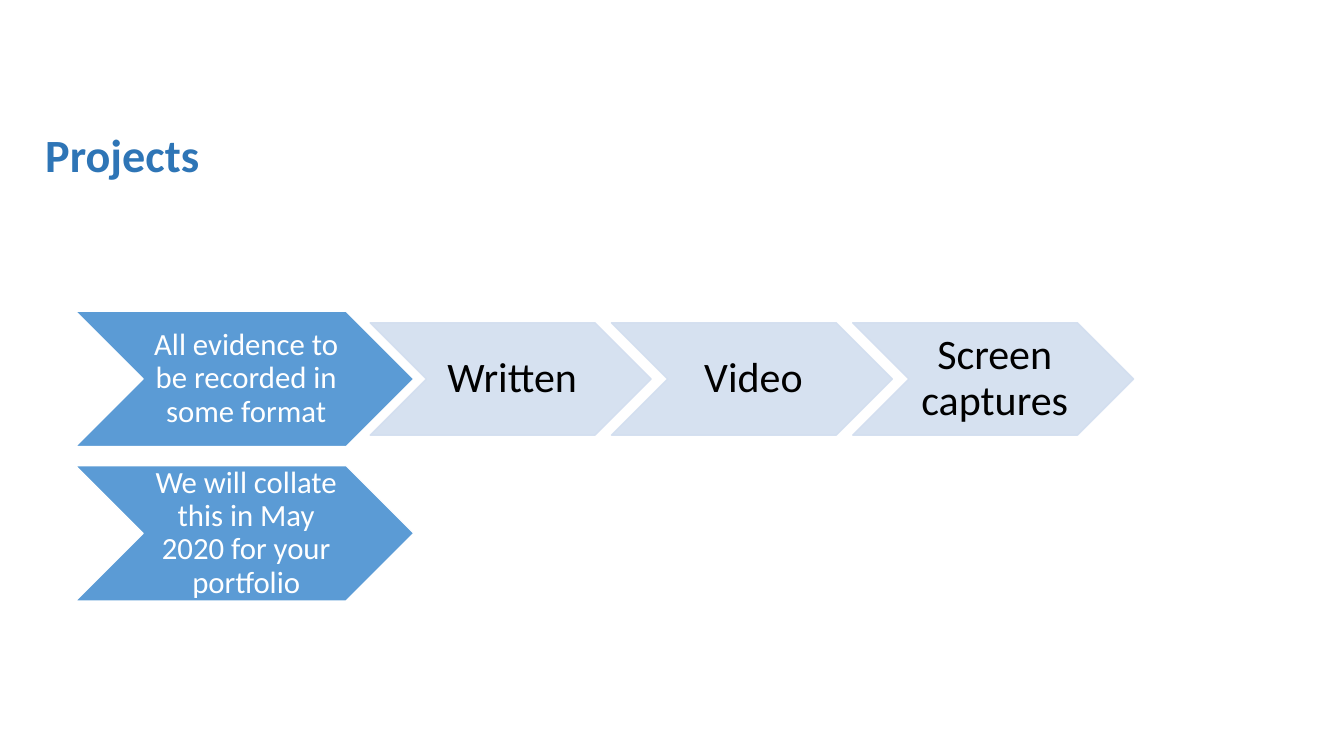
import dataclasses

import lxml.etree
import pptx
import pptx.dml.color
import pptx.enum.shapes
import pptx.enum.text
import pptx.oxml.ns
import pptx.util

Cm = pptx.util.Cm
Pt = pptx.util.Pt


@dataclasses.dataclass(frozen=True)
class ChevronStyle:
    width: float
    height: float
    fill: str
    line: str
    text: str
    size: int
    opacity: int


@dataclasses.dataclass(frozen=True)
class Theme:
    font: str = "Calibri"
    title_color: str = "2E75B6"
    title_size: int = 33
    line_spacing: float = 0.9
    lead: ChevronStyle = ChevronStyle(8.53, 3.41, "5B9BD5", "FFFFFF", "FFFFFF", 22, 100)
    detail: ChevronStyle = ChevronStyle(7.08, 2.83, "D2DEEF", "D2DEEF", "000000", 30, 90)


def rgb(value):
    return pptx.dml.color.RGBColor.from_string(value)


def set_attributes(target, values):
    for name, value in values.items():
        setattr(target, name, value)


class SlideBuilder:
    def __init__(self, slide, theme):
        self.slide = slide
        self.theme = theme

    def add_text(self, shape, text, size, color, alignment, margins, bold=False):
        """Fill a shape with one vertically centred paragraph; margins are left, top, right, bottom in cm."""
        frame = shape.text_frame
        sides = ("margin_left", "margin_top", "margin_right", "margin_bottom")
        set_attributes(frame, {
            "word_wrap": True,
            "vertical_anchor": pptx.enum.text.MSO_ANCHOR.MIDDLE,
            **{side: Cm(margin) for side, margin in zip(sides, margins)},
        })
        paragraph = frame.paragraphs[0]
        set_attributes(paragraph, {
            "alignment": alignment,
            "line_spacing": self.theme.line_spacing,
        })
        run = paragraph.add_run()
        run.text = text
        set_attributes(run.font, {"name": self.theme.font, "size": Pt(size), "bold": bold})
        run.font.color.rgb = rgb(color)

    def title(self, text, left, top, width, height):
        box = self.slide.shapes.add_textbox(Cm(left), Cm(top), Cm(width), Cm(height))
        self.add_text(box, text, self.theme.title_size, self.theme.title_color,
                      pptx.enum.text.PP_ALIGN.LEFT, (0.25, 0.13, 0.25, 0.13), bold=True)

    def chevron(self, text, left, middle, style):
        """Place a chevron by its left edge and vertical centre."""
        shape = self.slide.shapes.add_shape(
            pptx.enum.shapes.MSO_SHAPE.CHEVRON,
            Cm(left), Cm(middle - style.height / 2), Cm(style.width), Cm(style.height))
        shape.shadow.inherit = False
        shape.fill.solid()
        shape.fill.fore_color.rgb = rgb(style.fill)
        shape.line.color.rgb = rgb(style.line)
        shape.line.width = Pt(1)
        if style.opacity < 100:
            for color in shape._element.spPr.iter(pptx.oxml.ns.qn("a:srgbClr")):
                alpha = lxml.etree.SubElement(color, pptx.oxml.ns.qn("a:alpha"))
                alpha.set("val", str(style.opacity * 1000))
        self.add_text(shape, text, style.size, style.text,
                      pptx.enum.text.PP_ALIGN.CENTER, (0.08, 0.04, 0, 0.04))


def main():
    presentation = pptx.Presentation()
    presentation.slide_width = Cm(33.87)
    presentation.slide_height = Cm(19.05)
    slide = presentation.slides.add_slide(presentation.slide_layouts[6])
    theme = Theme()
    builder = SlideBuilder(slide, theme)

    builder.title("Projects", 0.89, 2.72, 32.2, 2.51)

    rows = [
        ("All evidence to be recorded in some format", ["Written", "Video", "Screen captures"]),
        ("We will collate this in May 2020 for your portfolio", []),
    ]
    first_middle, row_pitch = 9.55, 3.89
    lead_left, detail_left, detail_pitch = 1.9, 9.33, 6.08
    for row, (lead, details) in enumerate(rows):
        middle = first_middle + row * row_pitch
        builder.chevron(lead, lead_left, middle, theme.lead)
        for column, detail in enumerate(details):
            builder.chevron(detail, detail_left + column * detail_pitch, middle, theme.detail)

    presentation.save("out.pptx")


if __name__ == "__main__":
    main()
